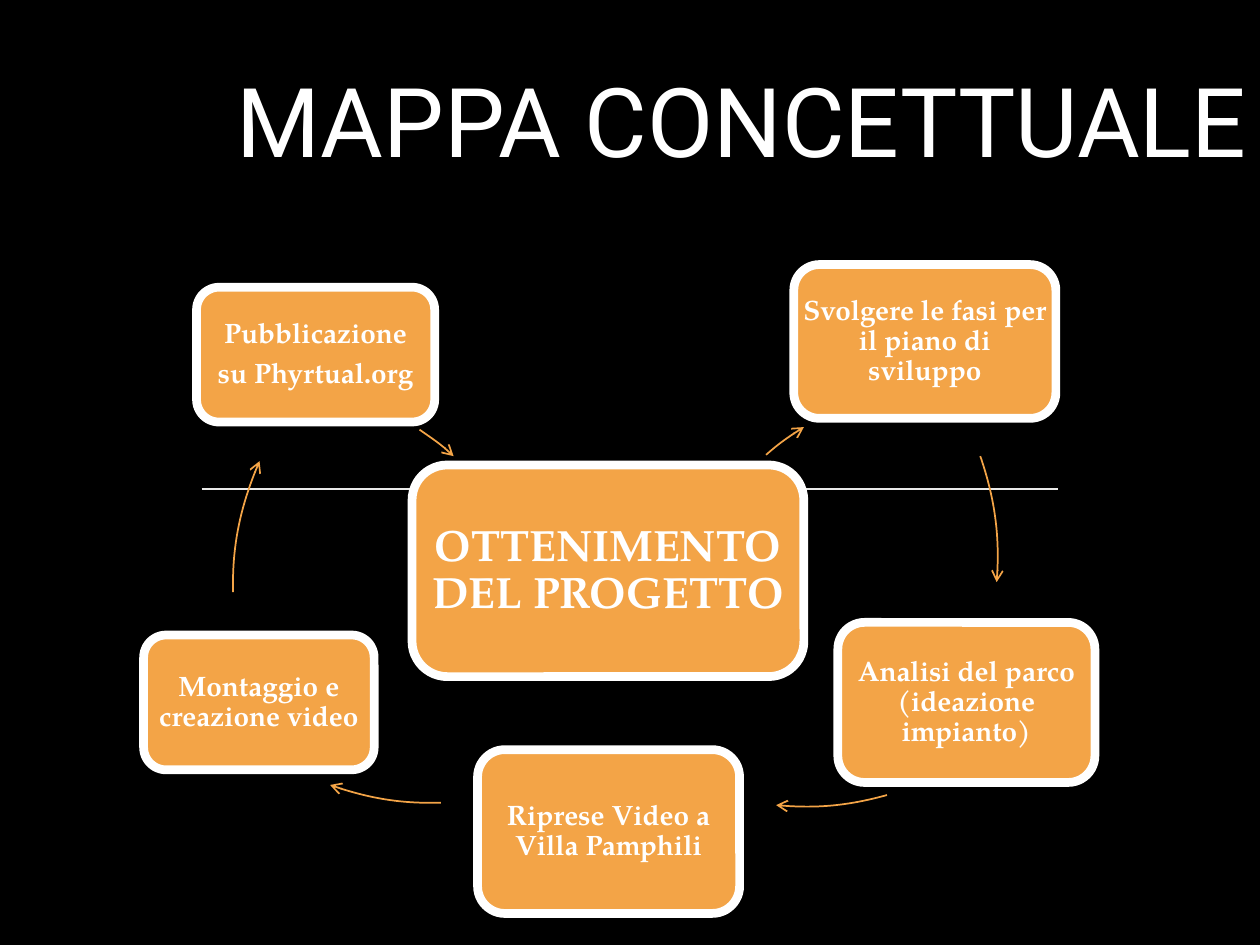
from lxml import etree
from pptx import Presentation
from pptx.dml.color import RGBColor
from pptx.enum.shapes import MSO_CONNECTOR, MSO_SHAPE
from pptx.enum.text import MSO_ANCHOR, PP_ALIGN
from pptx.oxml.ns import qn
from pptx.util import Pt

PX = 9144
STRAIGHT = MSO_CONNECTOR.STRAIGHT
ROUNDED = MSO_SHAPE.ROUNDED_RECTANGLE
MIDDLE = MSO_ANCHOR.MIDDLE
CENTER = PP_ALIGN.CENTER
ORANGE, WHITE, RULE, BLACK = "F3A447", "FFFFFF", "E9E9E8", "000000"
CIRCLE = 478

PROJECT = ((327, 369, 311, 168), ["OTTENIMENTO DEL PROGETTO"], 25)
STEPS = [
    ((630, 210, 208, 122), ["Svolgere le fasi per il piano di sviluppo"], 16),
    ((665, 494, 204, 127), ["Analisi del parco (ideazione impianto)"], 16),
    ((379, 595, 208, 130), ["Riprese Video a Villa Pamphili"], 16),
    ((114, 504, 183, 107), ["Montaggio e creazione video"], 16),
    ((156, 228, 189, 107), ["Pubblicazione", "su Phyrtual.org"], 16),
]
ARROWS = [
    ((524, 304), [(84, 57), (93, 49), (104, 41), (114, 35)]),
    ((314, 203), [(464, 159), (475, 191), (480, 225), (477, 259)]),
    ((399, 162), [(305, 469), (276, 477), (247, 480), (217, 477)]),
    ((105, 159), [(245, 478), (215, 479), (185, 474), (157, 464)]),
    ((185, 225), [(0, 245), (-1, 209), (7, 173), (21, 141)]),
    ((-34, 304), [(367, 37), (377, 44), (386, 50), (394, 58)]),
]


def color(hex_string):
    """Turn a hex string into a colour."""
    return RGBColor.from_string(hex_string)


def emu(*lengths):
    """Turn px lengths into EMU."""
    return [round(length * PX) for length in lengths]


def write(paragraph, text, font_name, size, bold=False):
    """Fill a paragraph with centred white text."""
    paragraph.text = text
    paragraph.alignment = CENTER
    paragraph.font.name = font_name
    paragraph.font.size = Pt(size)
    paragraph.font.bold = bold
    paragraph.font.color.rgb = color(WHITE)


def add_title(slide, box, text):
    """Place the slide title in its box."""
    frame = slide.shapes.add_textbox(*emu(*box)).text_frame
    frame.word_wrap = False
    write(frame.paragraphs[0], text, "Roboto", 55)


def add_rule(slide, box, gap):
    """Draw a horizontal rule along the box top, broken by a central gap."""
    left, top, width, _ = box
    length = (width - gap) / 2
    for start in (left, left + length + gap):
        line = slide.shapes.add_connector(
            STRAIGHT, *emu(start, top, start + length, top))
        line.line.color.rgb = color(RULE)
        line.line.width = Pt(0.75)
        etree.SubElement(line._element.spPr, qn("a:effectLst"))


def add_card(slide, box, lines, size):
    """Draw a rounded card with one paragraph per line."""
    card = slide.shapes.add_shape(ROUNDED, *emu(*box))
    card.shadow.inherit = False
    card.fill.solid()
    card.fill.fore_color.rgb = color(ORANGE)
    card.line.color.rgb = color(WHITE)
    card.line.width = Pt(5)
    frame = card.text_frame
    frame.word_wrap = True
    frame.vertical_anchor = MIDDLE
    frame.margin_left = frame.margin_right = 0
    frame.margin_top = frame.margin_bottom = 0
    for index, text in enumerate(lines):
        paragraph = frame.add_paragraph() if index else frame.paragraphs[0]
        write(paragraph, text, "TeX Gyre Pagella", size, bold=True)
        paragraph.line_spacing = 0.9
        paragraph.space_after = Pt(0.35 * size)


def add_arrow(slide, corner, controls):
    """Draw a curved arrow from control points within its circle's box."""
    builder = slide.shapes.build_freeform()
    builder.add_line_segments([(CIRCLE, CIRCLE)], close=False)
    arrow = builder.convert_to_shape()
    arrow.left, arrow.top, arrow.width, arrow.height = emu(
        *corner, CIRCLE, CIRCLE)
    curve = next(arrow._element.spPr.iter(qn("a:path")))
    for child in list(curve):
        curve.remove(child)
    curve.set("w", str(CIRCLE))
    curve.set("h", str(CIRCLE))
    for tag, points in (("a:moveTo", controls[:1]),
                        ("a:cubicBezTo", controls[1:])):
        command = etree.SubElement(curve, qn(tag))
        for x, y in points:
            etree.SubElement(command, qn("a:pt"), x=str(x), y=str(y))
    arrow.shadow.inherit = False
    arrow.fill.background()
    arrow.line.color.rgb = color(ORANGE)
    arrow.line.width = Pt(1)
    etree.SubElement(arrow.line._get_or_add_ln(), qn("a:tailEnd"), type="arrow")


def add_cycle(slide):
    """Draw the project card, then each arrow with the step it leads to."""
    add_card(slide, *PROJECT)
    for arrow, step in zip(ARROWS, STEPS):
        add_arrow(slide, *arrow)
        add_card(slide, *step)
    add_arrow(slide, *ARROWS[-1])


def main():
    """Build and save the concept map."""
    presentation = Presentation()
    presentation.slide_width, presentation.slide_height = emu(1000, 750)
    slide = presentation.slides.add_slide(presentation.slide_layouts[6])
    slide.background.fill.solid()
    slide.background.fill.fore_color.rgb = color(BLACK)
    add_rule(slide, (160, 388, 680, 0), 30)
    add_cycle(slide)
    add_title(slide, (177, 44, 823, 103), "MAPPA CONCETTUALE")
    presentation.save("out.pptx")


if __name__ == "__main__":
    main()
